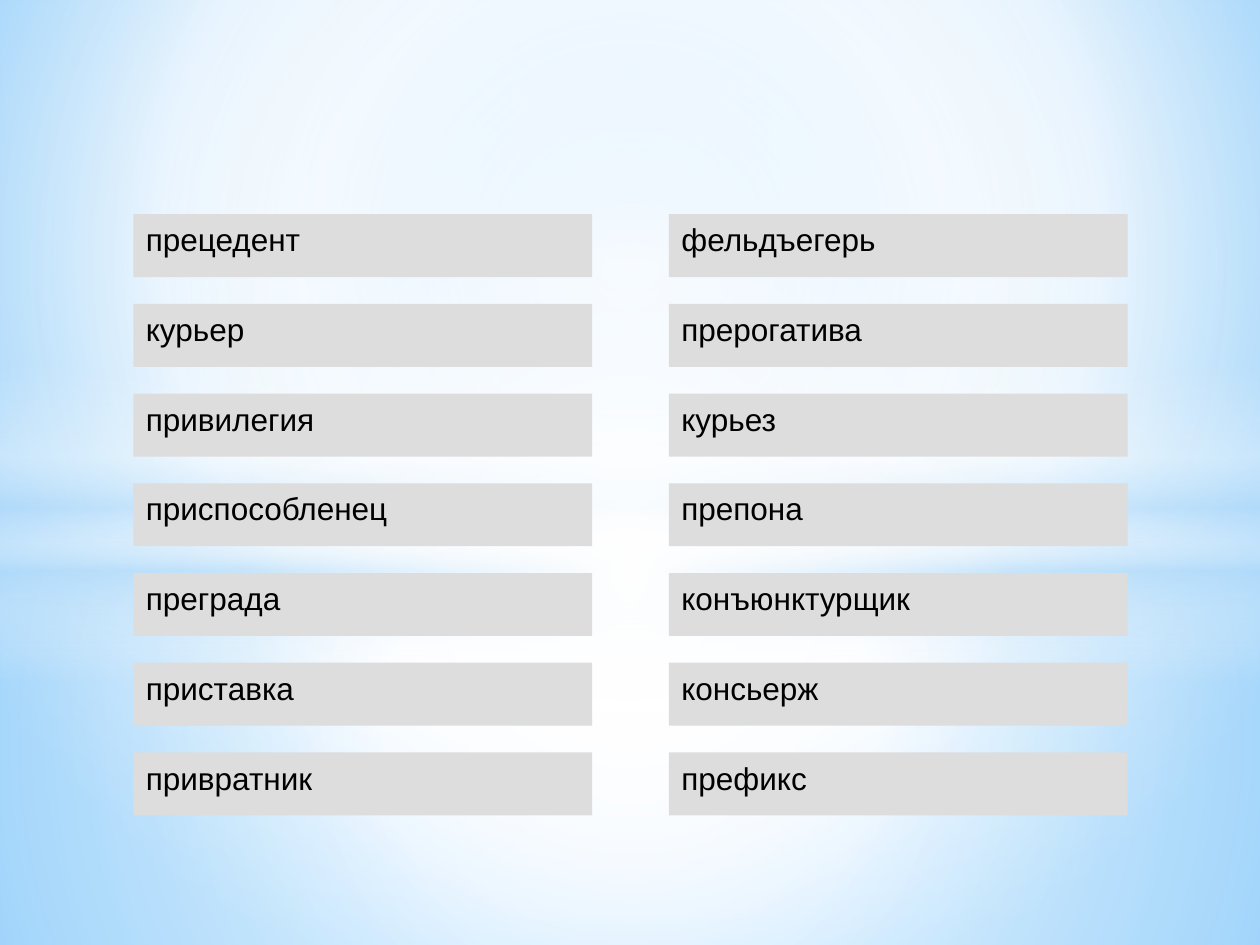
from dataclasses import dataclass
from typing import Optional

import pptx
import pptx.dml.color
import pptx.enum.shapes
import pptx.enum.text
import pptx.oxml
import pptx.oxml.ns
import pptx.util
from pptx.util import Inches

COLORS = {
    "white": "FFFFFF",
    "pale": "B4DCFA",
    "sky": "9ED5FF",
    "azure": "5BB9FF",
    "card": "DDDDDD",
    "text": "000000",
}
RECTANGLE = pptx.enum.shapes.MSO_SHAPE.RECTANGLE
OVAL = pptx.enum.shapes.MSO_SHAPE.OVAL


@dataclass(frozen=True)
class Stop:
    position: int
    color: str
    opacity: int = 100


@dataclass(frozen=True)
class Gradient:
    """Linear when angle is given, otherwise circular around focus (l, t, r, b in percent)."""
    stops: tuple[Stop, ...]
    focus: tuple[int, int, int, int] = (50, 50, 50, 50)
    angle: Optional[int] = None


@dataclass(frozen=True)
class Glow:
    outline: pptx.enum.shapes.MSO_SHAPE
    top: float
    height: float
    gradient: Gradient


BACKDROP = Gradient(
    (Stop(0, "sky"), Stop(60, "white"), Stop(100, "azure")), focus=(20, 10, 20, 60))
GLOWS = (
    Glow(RECTANGLE, 4.23, 3.27, Gradient(
        (Stop(0, "white", 91), Stop(37, "white", 76), Stop(100, "pale", 79)))),
    Glow(RECTANGLE, 0, 4.23, Gradient(
        (Stop(0, "white", 89), Stop(48, "white", 62), Stop(100, "pale", 79)))),
    Glow(RECTANGLE, 2.9, 2.5, Gradient(
        (Stop(0, "white", 0), Stop(29, "white", 30), Stop(45, "pale", 40),
         Stop(55, "white", 26), Stop(65, "pale", 60), Stop(100, "white", 0)), angle=90)),
    Glow(OVAL, 1.75, 5.58, Gradient((Stop(0, "white"), Stop(54, "white", 0)))),
)

SLIDE_WIDTH, SLIDE_HEIGHT = 10, 7.5
CARD_WIDTH, CARD_HEIGHT = 3.64, 0.5
FIRST_ROW, ROW_STEP = 1.7, 0.712
WORD_COLUMNS = {
    1.06: ("прецедент", "курьер", "привилегия", "приспособленец",
           "преграда", "приставка", "привратник"),
    5.31: ("фельдъегерь", "прерогатива", "курьез", "препона",
           "конъюнктурщик", "консьерж", "префикс"),
}


def rgb(name: str) -> pptx.dml.color.RGBColor:
    return pptx.dml.color.RGBColor.from_string(COLORS[name])


def apply_gradient(owner, fill, gradient: Gradient) -> None:
    """Fill with stops that carry opacity, which python-pptx cannot set itself."""
    fill.gradient()
    stops = "".join(
        f'<a:gs pos="{stop.position * 1000}"><a:srgbClr val="{COLORS[stop.color]}">'
        f'<a:alpha val="{stop.opacity * 1000}"/></a:srgbClr></a:gs>'
        for stop in gradient.stops)
    if gradient.angle is None:
        left, top, right, bottom = (side * 1000 for side in gradient.focus)
        direction = (f'<a:path path="circle"><a:fillToRect l="{left}" t="{top}" '
                     f'r="{right}" b="{bottom}"/></a:path>')
    else:
        direction = f'<a:lin ang="{gradient.angle * 60000}" scaled="0"/>'
    replacement = pptx.oxml.parse_xml(
        f'<a:gradFill {pptx.oxml.ns.nsdecls("a")} rotWithShape="1">'
        f'<a:gsLst>{stops}</a:gsLst>{direction}</a:gradFill>')
    current = owner.find(f'.//{pptx.oxml.ns.qn("a:gradFill")}')
    current.getparent().replace(current, replacement)


def add_glow(slide, glow: Glow) -> None:
    light = slide.shapes.add_shape(
        glow.outline, 0, Inches(glow.top), Inches(SLIDE_WIDTH), Inches(glow.height))
    light.shadow.inherit = False
    light.line.fill.background()
    apply_gradient(light.element, light.fill, glow.gradient)


def add_word_card(slide, word: str, left: float, top: float) -> None:
    card = slide.shapes.add_shape(
        RECTANGLE, Inches(left), Inches(top), Inches(CARD_WIDTH), Inches(CARD_HEIGHT))
    card.shadow.inherit = False
    card.fill.solid()
    card.fill.fore_color.rgb = rgb("card")
    card.line.fill.background()
    frame = card.text_frame
    frame.word_wrap = True
    frame.auto_size = pptx.enum.text.MSO_AUTO_SIZE.SHAPE_TO_FIT_TEXT
    frame.vertical_anchor = pptx.enum.text.MSO_ANCHOR.TOP
    paragraph = frame.paragraphs[0]
    paragraph.alignment = pptx.enum.text.PP_ALIGN.LEFT
    run = paragraph.add_run()
    run.text = word
    run.font.name = "Arial"
    run.font.size = pptx.util.Pt(18)
    run.font.color.rgb = rgb("text")


def main() -> None:
    presentation = pptx.Presentation()
    presentation.slide_width = Inches(SLIDE_WIDTH)
    presentation.slide_height = Inches(SLIDE_HEIGHT)
    slide = presentation.slides.add_slide(presentation.slide_layouts[6])
    apply_gradient(slide.element, slide.background.fill, BACKDROP)
    for glow in GLOWS:
        add_glow(slide, glow)
    for left, words in WORD_COLUMNS.items():
        for row, word in enumerate(words):
            add_word_card(slide, word, left, FIRST_ROW + row * ROW_STEP)
    presentation.save("out.pptx")


if __name__ == "__main__":
    main()
